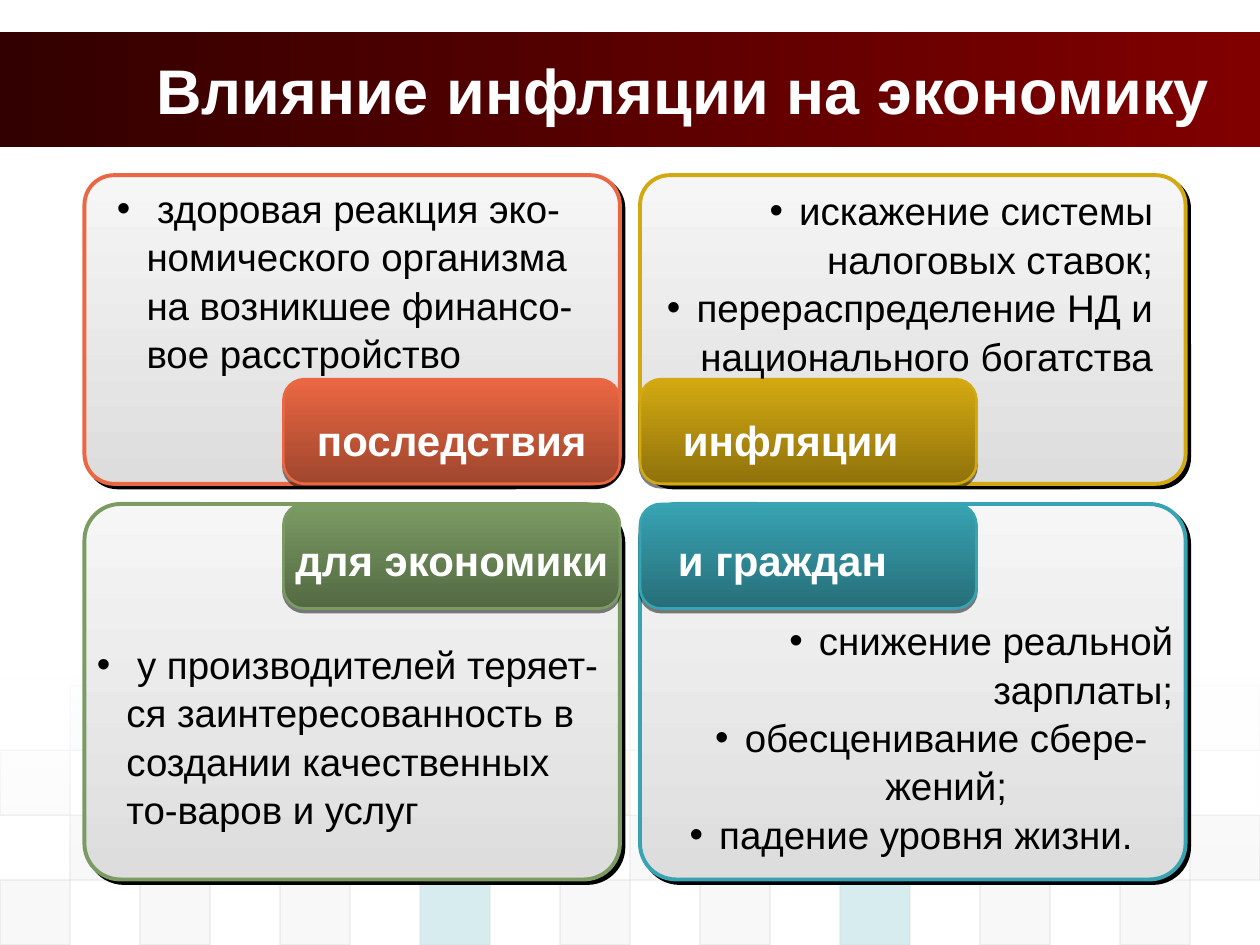
from lxml.etree import SubElement as Sub
from pptx import Presentation
from pptx.dml.color import RGBColor as RGB
from pptx.enum.shapes import MSO_SHAPE as Shape
from pptx.enum.text import MSO_ANCHOR as Anchor, PP_ALIGN as Align
from pptx.oxml.ns import qn
from pptx.util import Inches as In, Pt

WHITE, BLACK = RGB(255, 255, 255), RGB(0, 0, 0)
DARK, RED = RGB(0x33, 0, 0), RGB(0x80, 0, 0)
PALE, GREY = RGB(0xF6, 0xF6, 0xF6), RGB(0xDD, 0xDD, 0xDD)
MIST = RGB(0xEA, 0xEA, 0xEA)
CORAL, GOLD = RGB(0xEB, 0x67, 0x43), RGB(0xD3, 0xA9, 0x11)
GREEN, TEAL = RGB(0x7B, 0x9B, 0x63), RGB(0x38, 0xA3, 0xB2)

WIDE, HIGH = 10, 7.5
COLS = ((0.67, 4.25), (5.08, 4.33))
ROWS = ((1.39, 2.45), (4, 2.98))
TAB_W, TAB_H = 2.67, 0.83
HANG = 0.235

# One letter per tile, two columns apart; rows run downwards.
TINTS = {"D": GREY, "E": MIST, "G": GOLD, "T": TEAL}
TILES = (("TEETDTEGE", 5), ("DDDDGDDDT", 10),
         ("DGDDDDGDD", 20), ("DDDTDDTDD", 20))

LEFT, MID, RIGHT = Align.LEFT, Align.CENTER, Align.RIGHT

# Column, row, colour; tab text, its shift and width;
# body shift, drop and width; paragraphs as text, alignment, margin.
CARDS = (
    (0, 0, CORAL, "последствия", (0, 2.67), (0.16, 0.01, 3.86),
     ((" здоровая реакция эко-номического организма на возникшее "
       "финансо-вое расстройство", LEFT, HANG),)),
    (1, 0, GOLD, "инфляции", (0.01, 2.37), (0.08, 0.03, 4.09),
     (("искажение системы налоговых ставок;", RIGHT, HANG),
      ("перераспределение НД и национального богатства", RIGHT, HANG))),
    (0, 1, GREEN, "для экономики", (-0.06, 2.79), (0, 1.02, 4.25),
     ((" у производителей теряет-ся заинтересованность в создании "
       "качественных то-варов и услуг", LEFT, HANG),)),
    (1, 1, TEAL, "и граждан", (0.07, 2.12), (0.05, 0.83, 4.28),
     (("снижение реальной зарплаты;", RIGHT, HANG),
      ("обесценивание сбере-жений;", MID, 0.48),
      ("падение уровня жизни.", LEFT, 0.48))),
)


def fade(fill, ends, angle=270):
    fill.gradient()
    fill.gradient_angle = angle
    for stop, color in zip(fill.gradient_stops, ends):
        stop.color.rgb = color


def veil(node, shares):
    """Set the opacity, in percent, of each colour under node."""
    for color, share in zip(node.iter(qn("a:srgbClr")), shares):
        Sub(color, qn("a:alpha"), val=str(share * 1000))


def cast(node, dist, angle, share):
    """Give a shape or a run a hard black shadow."""
    group = node.find(qn("a:effectLst"))
    if group is None:
        group = Sub(node, qn("a:effectLst"))
    drop = Sub(group, qn("a:outerShdw"), blurRad="0", dist=str(Pt(dist)),
               dir=str(angle * 60000), algn="ctr", rotWithShape="0")
    Sub(drop, qn("a:srgbClr"), val="000000")
    veil(drop, [share])


def draw(slide, kind, box, line=None, width=0.75):
    item = slide.shapes.add_shape(kind, *map(In, box))
    item.shadow.inherit = False
    if line is None:
        item.line.fill.background()
    else:
        item.line.color.rgb = line
        item.line.width = Pt(width)
    return item


def panel(slide, box, round_by, ends, line, width, shade):
    item = draw(slide, Shape.ROUNDED_RECTANGLE, box, line, width)
    item.adjustments[0] = round_by
    fade(item.fill, ends)
    cast(item.element.spPr, *shade)


def style(para, size, color, bold=False):
    font = para.font
    font.name, font.size, font.bold = "Arial", Pt(size), bold
    font.color.rgb = color


def write(slide, box):
    frame = slide.shapes.add_textbox(*map(In, box)).text_frame
    frame.word_wrap = True
    return frame


def label(slide, box, text):
    para = write(slide, box).paragraphs[0]
    run = para.add_run()
    run.text = text
    para.alignment, para.line_spacing = MID, 1.05
    style(para, 24, WHITE, True)
    cast(run.font._element, 1.5, 45, 60)


def points(slide, box, items):
    frame = write(slide, box)
    for i, (text, align, margin) in enumerate(items):
        para = frame.add_paragraph() if i else frame.paragraphs[0]
        para.text = text
        para.alignment, para.line_spacing = align, 1.05
        props = para._p.get_or_add_pPr()
        props.set("marL", str(In(margin)))
        props.set("indent", str(-In(HANG)))
        Sub(props, qn("a:buFont"), typeface="Arial")
        Sub(props, qn("a:buChar"), char="•")
        style(para, 22, BLACK)


def floor(slide, top):
    """Checkered tiles along the foot, fading out upwards."""
    step, rise = WIDE / 18, (HIGH - top) / len(TILES)
    for row, (tints, share) in enumerate(TILES):
        for i, tint in enumerate(tints):
            col = 2 * i + (row + 1) % 2
            box = col * step, top + row * rise, step, rise
            tile = draw(slide, Shape.RECTANGLE, box, GREY)
            tile.fill.solid()
            tile.fill.fore_color.rgb = TINTS[tint]
            veil(tile.element.spPr, (share, 60))
    haze = draw(slide, Shape.RECTANGLE, (0, top - 0.07, WIDE, 1.62))
    fade(haze.fill, (WHITE, WHITE))
    veil(haze.element.spPr, (90, 0))


def header(slide, box):
    x, y, w, h = box
    band = draw(slide, Shape.RECTANGLE, box)
    fade(band.fill, (DARK, RED), 0)
    title = slide.shapes.title
    slide.shapes._spTree.append(title.element)
    title.left, title.top = In(x + 1.14), In(y)
    title.width, title.height = In(w - 1.34), In(h)
    frame = title.text_frame
    frame.text = "Влияние инфляции на экономику"
    frame.vertical_anchor, frame.word_wrap = Anchor.MIDDLE, True
    para = frame.paragraphs[0]
    para.alignment = LEFT
    style(para, 36, WHITE, True)


def card(slide, box, col, row, color, text, name, body, items):
    """A panel whose tab sits in the corner nearest the middle."""
    x, y, w, h = box
    panel(slide, box, 0.096, (PALE, GREY), color, 2.25, (2.8, 45, 100))
    left = x if col else x + w - TAB_W
    top = y if row else y + h - TAB_H
    deep = RGB(*(int(part * 0.68) for part in color))
    panel(slide, (left, top, TAB_W, TAB_H), 0.2, (color, deep),
          color, 1.5, (2, 90, 50))
    shift, width = name
    label(slide, (left + shift, top + (0.17 if row else 0.21), width, 0.5),
          text)
    dx, dy, wide = body
    points(slide, (x + dx, y + dy, wide, 1.58), items)


def main():
    deck = Presentation()
    deck.slide_width, deck.slide_height = In(WIDE), In(HIGH)
    slide = deck.slides.add_slide(deck.slide_layouts[5])
    floor(slide, 5.44)
    header(slide, (0, 0.25, WIDE, 0.92))
    for col, row, *rest in CARDS:
        (x, w), (y, h) = COLS[col], ROWS[row]
        card(slide, (x, y, w, h), col, row, *rest)
    deck.save("out.pptx")


if __name__ == "__main__":
    main()
